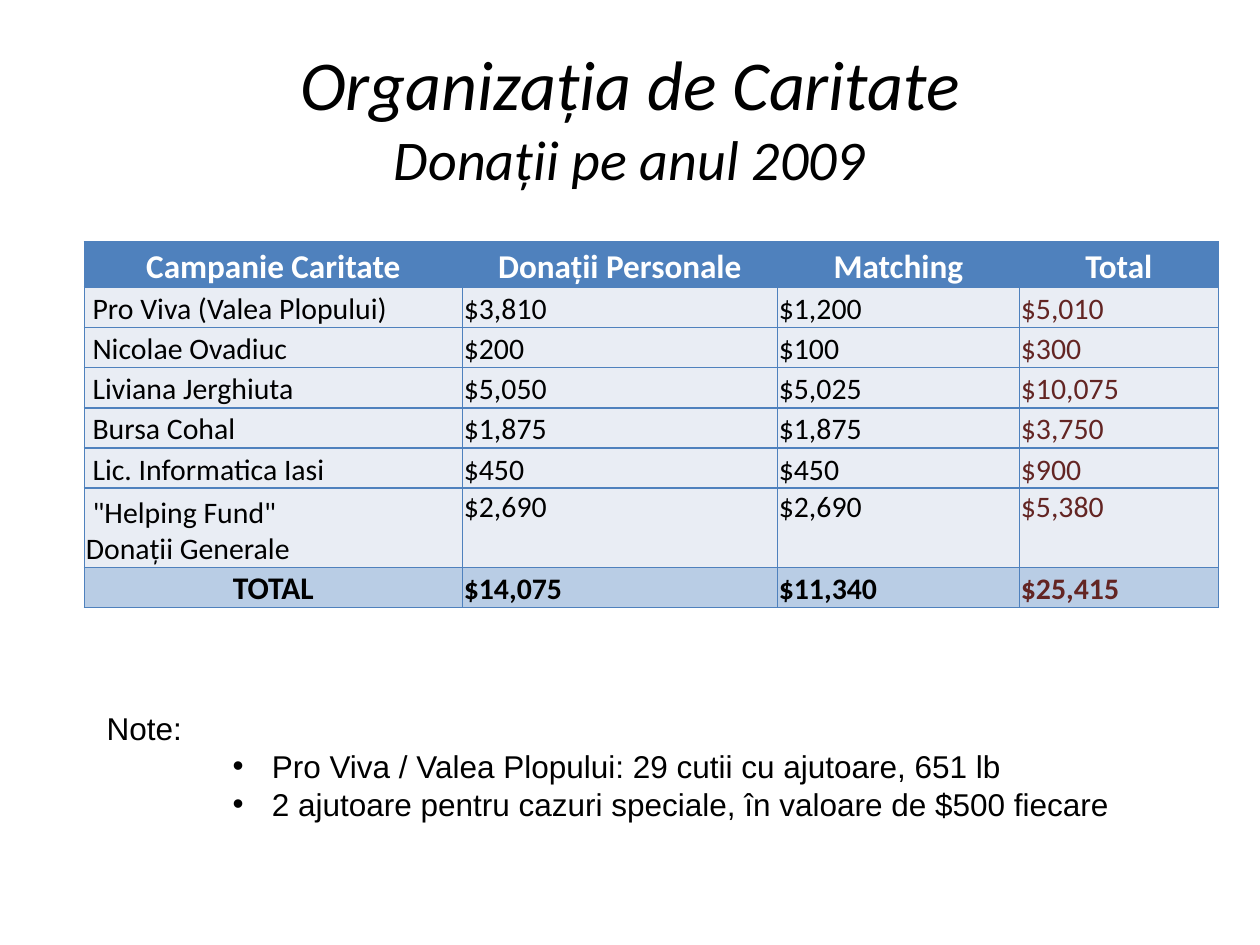
import pptx
import pptx.dml.color
import pptx.enum.text
import pptx.oxml
import pptx.oxml.ns
import pptx.util

Cm = pptx.util.Cm
Pt = pptx.util.Pt
ALIGN = pptx.enum.text.PP_ALIGN
ANCHOR = pptx.enum.text.MSO_ANCHOR

THEME = {
    "ink": "000000", "header_ink": "FFFFFF", "total_ink": "632523",
    "accent": "4F81BD", "body_fill": "E9EDF4", "total_fill": "B9CDE5",
    "heading": "Calibri", "notes": "Arial",
    "title_size": 40, "subtitle_size": 32, "header_size": 19,
    "body_size": 17, "total_size": 18, "note_size": 18,
}


def apply(target, values):
    for attribute, value in values.items():
        setattr(target, attribute, value)


def write(paragraph, text, size, ink="ink", face="heading", **extras):
    run = paragraph.add_run()
    run.text = text
    apply(run.font, {"name": THEME[face], "size": Pt(THEME[size]), **extras})
    run.font.color.rgb = pptx.dml.color.RGBColor.from_string(THEME[ink])


deck = pptx.Presentation()
apply(deck, {"slide_width": Cm(25.4), "slide_height": Cm(19.05)})
slide = deck.slides.add_slide(deck.slide_layouts[6])

title = slide.shapes.add_textbox(Cm(1.27), Cm(0.76), Cm(22.86), Cm(3.18)).text_frame
apply(title, {"word_wrap": True, "vertical_anchor": ANCHOR.MIDDLE})
heading = title.paragraphs[0]
heading.alignment = ALIGN.CENTER
write(heading, "Organizația de Caritate", "title_size", italic=True)
heading.add_line_break()
write(heading, "Donații pe anul 2009", "subtitle_size", italic=True)

campaigns = [
    (" Pro Viva (Valea Plopului)", 3810, 1200),
    (" Nicolae Ovadiuc", 200, 100),
    (" Liviana Jerghiuta", 5050, 5025),
    (" Bursa Cohal", 1875, 1875),
    (" Lic. Informatica Iasi", 450, 450),
    (' "Helping Fund"\nDonații Generale', 2690, 2690),
]
personal_sum = sum(personal for _, personal, _ in campaigns)
matching_sum = sum(matching for _, _, matching in campaigns)
donations = [("Campanie Caritate", "Donații Personale", "Matching", "Total")]
for name, personal, matching in campaigns + [("TOTAL", personal_sum, matching_sum)]:
    amounts = (personal, matching, personal + matching)
    donations.append((name, *(f"${amount:,}" for amount in amounts)))

column_widths = [7.62, 6.35, 4.88, 4.01]
row_heights = [0.91] + [0.81] * 5 + [1.6, 0.81]
grid = slide.shapes.add_table(
    len(row_heights), len(column_widths), Cm(1.7), Cm(4.88),
    Cm(sum(column_widths)), Cm(sum(row_heights))).table
for column, width in zip(grid.columns, column_widths):
    column.width = Cm(width)
for row, height in zip(grid.rows, row_heights):
    row.height = Cm(height)

cell_format = {"margin_left": Cm(0.03), "margin_right": Cm(0.03),
               "margin_top": Cm(0.03), "margin_bottom": 0}
last = len(donations) - 1
for r, entries in enumerate(donations):
    is_header, is_total = r == 0, r == last
    fill = "accent" if is_header else "total_fill" if is_total else "body_fill"
    for c, entry in enumerate(entries):
        cell = grid.cell(r, c)
        at_top = r == last - 1 and c > 0
        apply(cell, {**cell_format,
                     "vertical_anchor": ANCHOR.TOP if at_top else ANCHOR.BOTTOM})
        for side in ("lnL", "lnR", "lnT", "lnB"):
            cell._tc.get_or_add_tcPr().append(pptx.oxml.parse_xml(
                f'<a:{side} {pptx.oxml.ns.nsdecls("a")} w="12700"><a:solidFill>'
                f'<a:srgbClr val="{THEME["accent"]}"/></a:solidFill></a:{side}>'))
        cell.fill.solid()
        cell.fill.fore_color.rgb = pptx.dml.color.RGBColor.from_string(THEME[fill])

        size = "header_size" if is_header else "body_size"
        if is_total and c == 0:
            size = "total_size"
        ink = "header_ink" if is_header else "total_ink" if c == 3 else "ink"
        centred = is_header or (is_total and c == 0)
        for i, line in enumerate(entry.split("\n")):
            frame = cell.text_frame
            paragraph = frame.add_paragraph() if i else frame.paragraphs[0]
            paragraph.alignment = ALIGN.CENTER if centred else ALIGN.LEFT
            write(paragraph, line, size, ink, bold=is_header or is_total)

notes = slide.shapes.add_textbox(Cm(1.9), Cm(14.17), Cm(22.23), Cm(2.57)).text_frame
apply(notes, {"word_wrap": True,
              "auto_size": pptx.enum.text.MSO_AUTO_SIZE.SHAPE_TO_FIT_TEXT})
write(notes.paragraphs[0], "Note:", "note_size", face="notes")
for remark in ("Pro Viva / Valea Plopului: 29 cutii cu ajutoare, 651 lb",
               "2 ajutoare pentru cazuri speciale, în valoare de $500 fiecare"):
    bullet = notes.add_paragraph()
    bullet.level = 2
    properties = bullet._p.get_or_add_pPr()
    for attribute, value in {"marL": Cm(3.33), "indent": Cm(-0.79)}.items():
        properties.set(attribute, str(int(value)))
    for mark in ('buFont {} typeface="Arial"', 'buChar {} char="•"'):
        properties.append(pptx.oxml.parse_xml(
            f'<a:{mark.format(pptx.oxml.ns.nsdecls("a"))}/>'))
    write(bullet, remark, "note_size", face="notes")

deck.save("out.pptx")
